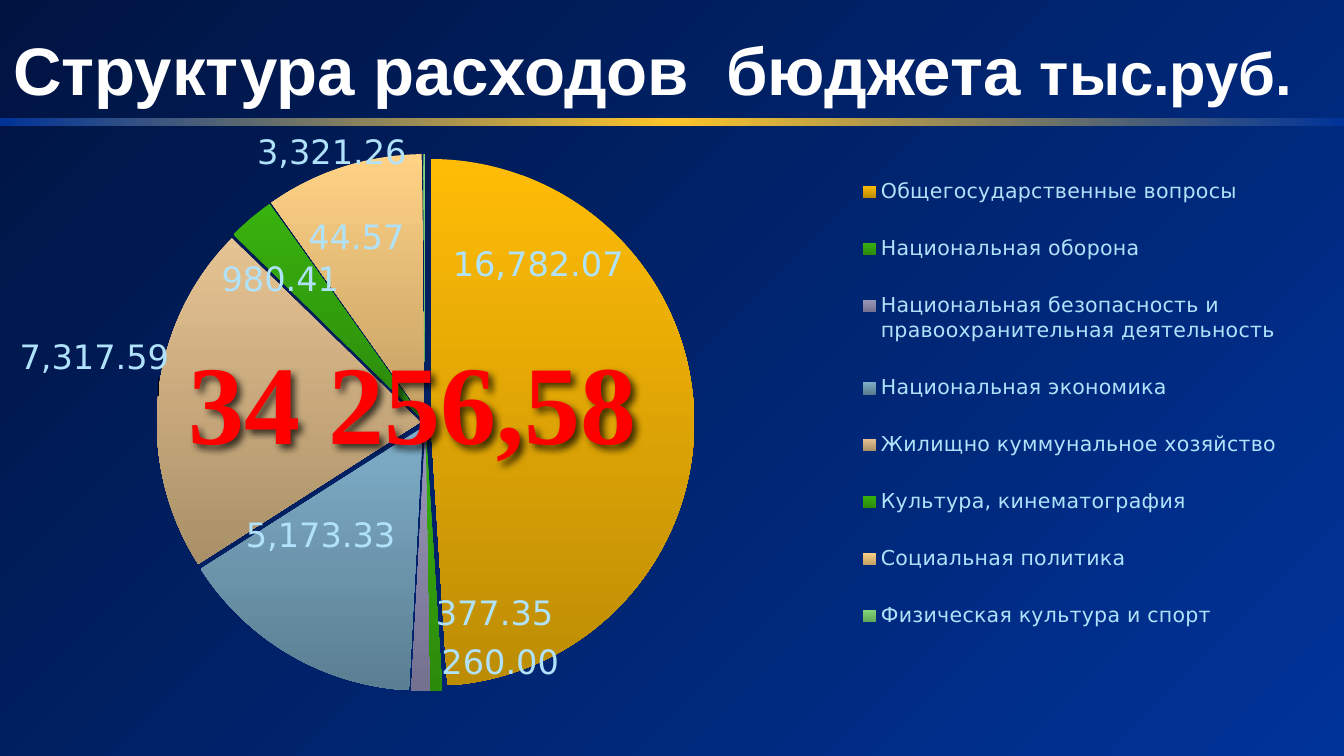
import math
from copy import deepcopy
from dataclasses import dataclass

from lxml import etree
from pptx import Presentation
from pptx.chart.data import CategoryChartData
from pptx.dml.color import RGBColor
from pptx.enum import chart as charts, shapes, text
from pptx.oxml import parse_xml
from pptx.oxml.ns import nsdecls, qn
from pptx.util import Pt

COLORS = {
    "night": "001441", "royal": "003399", "gold": "FDC529",
    "title": "FFFFFF", "total": "FF0000", "label": "B1E2FB",
}
CHART_LEFT, CHART_TOP, CHART_WIDTH, CHART_HEIGHT = 0, 66.2, 703.4, 319.7
PIE_X, PIE_Y, PIE_SIZE = 228, 226.5, 288
LABEL_RADIUS = 73


@dataclass
class Expense:
    name: str
    amount: float
    light: str
    dark: str
    label_x: float
    label_y: float


EXPENSES = [
    Expense("Общегосударственные вопросы", 16782.07, "FFBC06", "BC8C04", 288, 142),
    Expense("Национальная оборона", 260, "38B20E", "2C8A0B", 268, 355),
    Expense("Национальная безопасность и правоохранительная деятельность",
            377.35, "9A97BB", "747190", 265, 329),
    Expense("Национальная экономика", 5173.33, "7FAEC9", "5B7F92", 172, 287),
    Expense("Жилищно куммунальное хозяйство", 7317.59, "E6C392", "AA9068", 51, 192),
    Expense("Культура, кинематография", 980.41, "38B20E", "2C8A0B", 150.5, 150.5),
    Expense("Социальная политика", 3321.26, "FFD285", "C3A064", 178, 82.5),
    Expense("Физическая культура и спорт", 44.57, "84D67C", "5FA857", 191, 128),
]


def rgb(color: str) -> RGBColor:
    return RGBColor.from_string(color)


def apply_gradient(fill, colors: list[str], angle: float) -> None:
    fill.gradient()
    fill.gradient_angle = angle
    for stop, color, position in zip(fill.gradient_stops, colors, (0, 1)):
        stop.color.rgb = rgb(color)
        stop.position = position


def manual_layout(x: float, y: float, width: float = 0, height: float = 0):
    layout = etree.Element(qn("c:layout"))
    manual = etree.SubElement(layout, qn("c:manualLayout"))
    settings = {"x": x, "y": y}
    if width:
        settings = {"layoutTarget": "inner", "xMode": "edge", "yMode": "edge",
                    **settings, "w": width, "h": height}
    for tag, value in settings.items():
        content = f"{value:.4f}" if isinstance(value, float) else value
        etree.SubElement(manual, qn(f"c:{tag}"), val=str(content))
    return layout


def add_text_box(slide, left: float, top: float, width: float, height: float):
    frame = slide.shapes.add_textbox(Pt(left), Pt(top), Pt(width), Pt(height)).text_frame
    frame.word_wrap = True
    frame.vertical_anchor = text.MSO_ANCHOR.MIDDLE
    return frame


def add_heading(slide) -> None:
    line = add_text_box(slide, 0, 11.5, 720, 50.4).paragraphs[0]
    for words, size in (("Структура расходов  бюджета ", 36), ("тыс.руб.", 32)):
        run = line.add_run()
        run.text = words
        run.font.size = Pt(size)
    line.font.name = "Arial"
    line.font.bold = True
    line.font.color.rgb = rgb(COLORS["title"])


def add_divider(slide) -> None:
    divider = slide.shapes.add_shape(
        shapes.MSO_SHAPE.RECTANGLE, 0, Pt(63.4), Pt(720), Pt(4.3))
    divider.shadow.inherit = False
    divider.line.fill.background()
    apply_gradient(divider.fill, [COLORS["royal"], COLORS["royal"]], 0)
    first = next(divider._element.spPr.iter(qn("a:gs")))
    first.addnext(deepcopy(first))
    middle = divider.fill.gradient_stops[1]
    middle.position = 0.5
    middle.color.rgb = rgb(COLORS["gold"])


def style_slices(series) -> None:
    total = sum(expense.amount for expense in EXPENSES)
    passed = 0.0
    labels = series.data_labels
    labels.show_value = True
    labels.number_format = "#,##0.00"
    labels.number_format_is_linked = False
    for index, expense in enumerate(EXPENSES):
        point = series.points[index]
        apply_gradient(point.format.fill, [expense.light, expense.dark], 270)
        point.format.line.fill.background()
        point.data_label.position = charts.XL_LABEL_POSITION.CENTER
        angle = 2 * math.pi * (passed + expense.amount / 2) / total
        passed += expense.amount
        shift_x = expense.label_x - PIE_X - LABEL_RADIUS * math.sin(angle)
        shift_y = expense.label_y - PIE_Y + LABEL_RADIUS * math.cos(angle)
        label = labels._element.findall(qn("c:dLbl"))[index]
        label.find(qn("c:idx")).addnext(
            manual_layout(shift_x / CHART_WIDTH, shift_y / CHART_HEIGHT))
    explosion = etree.Element(qn("c:explosion"), val="2")
    series._element.find(qn("c:dPt")).addprevious(explosion)


def add_expense_chart(slide) -> None:
    data = CategoryChartData(number_format="#,##0.00")
    data.categories = [expense.name for expense in EXPENSES]
    data.add_series("Series 1", [expense.amount for expense in EXPENSES])
    chart = slide.shapes.add_chart(
        charts.XL_CHART_TYPE.PIE, Pt(CHART_LEFT), Pt(CHART_TOP),
        Pt(CHART_WIDTH), Pt(CHART_HEIGHT), data).chart
    chart.has_title = False
    chart.font.name = "DejaVu Sans"
    chart.font.size = Pt(18)
    chart.font.color.rgb = rgb(COLORS["label"])
    chart.plots[0].vary_by_categories = True
    style_slices(chart.plots[0].series[0])

    area = chart._chartSpace.chart.plotArea
    for automatic in area.findall(qn("c:layout")):
        area.remove(automatic)
    area.insert(0, manual_layout(
        (PIE_X - PIE_SIZE / 2 - CHART_LEFT) / CHART_WIDTH,
        (PIE_Y - PIE_SIZE / 2 - CHART_TOP) / CHART_HEIGHT,
        PIE_SIZE / CHART_WIDTH, PIE_SIZE / CHART_HEIGHT))

    chart.has_legend = True
    legend = chart.legend
    legend.position = charts.XL_LEGEND_POSITION.RIGHT
    legend.include_in_layout = False
    legend.font.size = Pt(11)
    legend.font.name = "DejaVu Sans"
    legend.font.color.rgb = rgb(COLORS["label"])
    for automatic in legend._element.findall(qn("c:layout")):
        legend._element.remove(automatic)
    placement = manual_layout(0.65, 0.04, 0.33, 0.86)
    placement[0].remove(placement[0].find(qn("c:layoutTarget")))
    legend._element.find(qn("c:legendPos")).addnext(placement)


def add_total(slide) -> None:
    frame = add_text_box(slide, 76.3, 174.2, 289.4, 80)
    line = frame.paragraphs[0]
    line.text = "34 256,58"
    line.alignment = text.PP_ALIGN.CENTER
    line.font.name = "Times New Roman"
    line.font.size = Pt(60)
    line.font.bold = True
    line.font.color.rgb = rgb(COLORS["total"])
    frame._parent._element.spPr.append(parse_xml(
        f'<a:effectLst {nsdecls("a")}><a:outerShdw blurRad="50800" dist="38100" '
        'dir="2700000"><a:srgbClr val="000000"><a:alpha val="70000"/>'
        '</a:srgbClr></a:outerShdw></a:effectLst>'))


def main() -> None:
    deck = Presentation()
    deck.slide_width, deck.slide_height = Pt(720), Pt(405)
    slide = deck.slides.add_slide(deck.slide_layouts[6])
    apply_gradient(slide.background.fill, [COLORS["night"], COLORS["royal"]], 315)
    add_divider(slide)
    add_heading(slide)
    add_expense_chart(slide)
    add_total(slide)
    deck.save("out.pptx")


if __name__ == "__main__":
    main()
